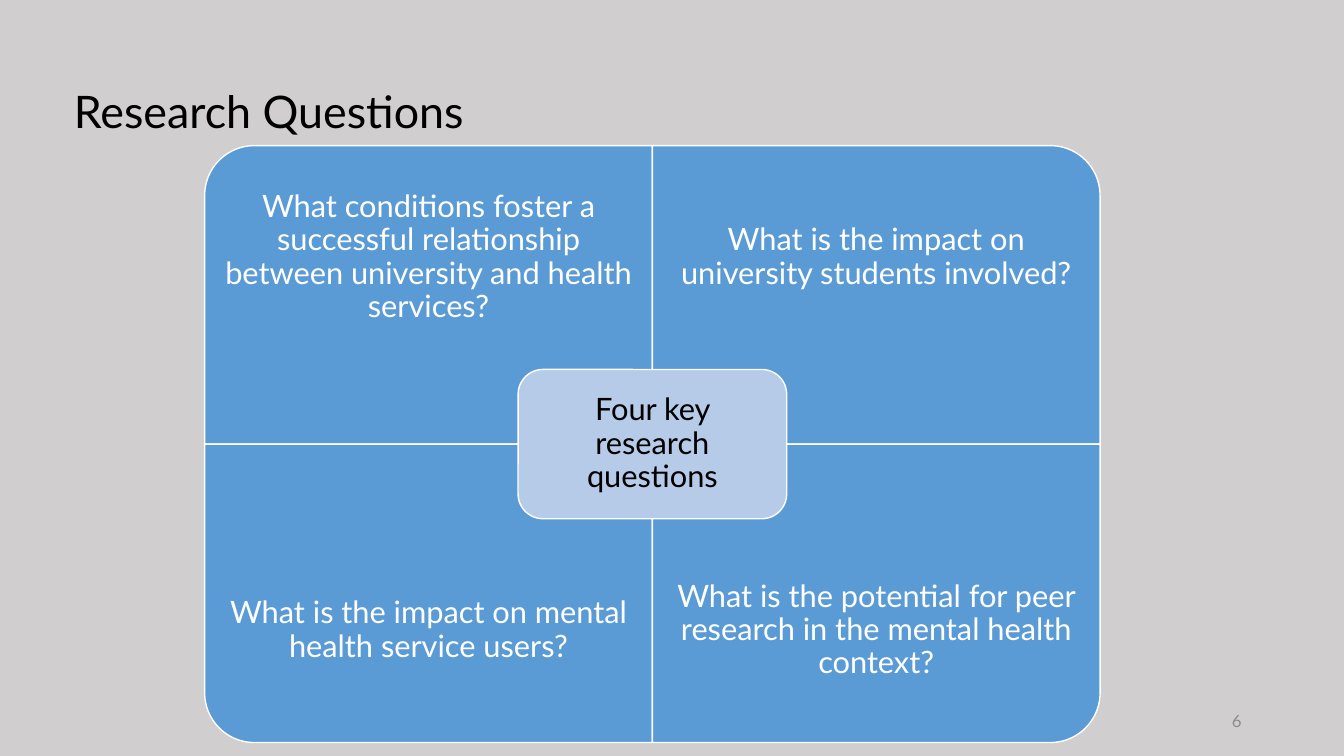
from pptx import Presentation
from pptx.dml.color import RGBColor
from pptx.enum.shapes import MSO_SHAPE as Shape
from pptx.enum.text import MSO_ANCHOR as Anchor, MSO_AUTO_SIZE as AutoSize, PP_ALIGN as Align
from pptx.util import Pt

FONT = "Lato"
COLORS = {
    "background": "D0CECE",
    "quadrant": "5B9BD5",
    "center": "B5CBE7",
    "white": "FFFFFF",
    "black": "000000",
    "number": "8C8C8C",
}
QUESTIONS = [
    ("What conditions foster a successful relationship between university and health services?", 270),
    ("What is the impact on university students involved?", 0),
    ("What is the impact on mental health service users?", 180),
    ("What is the potential for peer research in the mental health context?", 90),
]


def color(name):
    return RGBColor.from_string(COLORS[name])


def set_text(shape, text, size, color_name, align, anchor=Anchor.MIDDLE, inset=None, spacing=0.9):
    frame = shape.text_frame
    frame.text = text
    frame.word_wrap = True
    frame.auto_size = AutoSize.NONE
    frame.vertical_anchor = anchor
    if inset is not None:
        frame.margin_left = frame.margin_right = Pt(inset)
        frame.margin_top = frame.margin_bottom = Pt(inset)
    paragraph = frame.paragraphs[0]
    paragraph.alignment = align
    paragraph.line_spacing = spacing
    font = paragraph.runs[0].font
    font.name = FONT
    font.size = Pt(size)
    font.color.rgb = color(color_name)


def add_box(slide, kind, left, top, width, height, fill):
    shape = slide.shapes.add_shape(kind, Pt(left), Pt(top), Pt(width), Pt(height))
    shape.shadow.inherit = False
    shape.fill.solid()
    shape.fill.fore_color.rgb = color(fill)
    shape.line.color.rgb = color("white")
    shape.line.width = Pt(1)
    return shape


def add_title(slide, left, top, width, height):
    title = slide.shapes.title
    title.left, title.top, title.width, title.height = Pt(left), Pt(top), Pt(width), Pt(height)
    set_text(title, "Research Questions", 32, "black", Align.LEFT, Anchor.BOTTOM)


def add_slide_number(slide, left, top, width, height):
    number = slide.shapes.add_textbox(Pt(left), Pt(top), Pt(width), Pt(height))
    set_text(number, "6", 12, "number", Align.RIGHT, spacing=1.0)


def add_quadrant(slide, left, top, width, height, question, rotation, text_top):
    turned = rotation in (90, 270)
    box_width, box_height = (height, width) if turned else (width, height)
    quadrant = add_box(
        slide, Shape.ROUND_1_RECTANGLE,
        left + (width - box_width) / 2, top + (height - box_height) / 2,
        box_width, box_height, "quadrant",
    )
    quadrant.rotation = rotation
    label = slide.shapes.add_textbox(Pt(left), Pt(text_top), Pt(width), Pt(height * 0.75))
    set_text(label, question, 22, "white", Align.CENTER, inset=12.3)


def add_matrix(slide, left, top, width, height):
    cell_width, cell_height = width / 2, height / 2
    for index, (question, rotation) in enumerate(QUESTIONS):
        row, column = divmod(index, 2)
        cell_top = top + row * cell_height
        add_quadrant(
            slide, left + column * cell_width, cell_top, cell_width, cell_height,
            question, rotation, cell_top + row * cell_height / 4,
        )
    center_width, center_height = width * 0.3, height / 4
    center = add_box(
        slide, Shape.ROUNDED_RECTANGLE,
        left + (width - center_width) / 2, top + (height - center_height) / 2,
        center_width, center_height, "center",
    )
    set_text(center, "Four key research questions", 22, "black", Align.CENTER, inset=6.5)


def main():
    presentation = Presentation()
    presentation.slide_width, presentation.slide_height = Pt(960), Pt(540)
    slide = presentation.slides.add_slide(presentation.slide_layouts[5])
    slide.background.fill.solid()
    slide.background.fill.fore_color.rgb = color("background")
    add_title(slide, 45.5, 52.5, 342, 50)
    add_slide_number(slide, 678, 500.5, 216, 28.8)
    add_matrix(slide, 146.2, 104, 639.6, 426.4)
    presentation.save("out.pptx")


if __name__ == "__main__":
    main()
